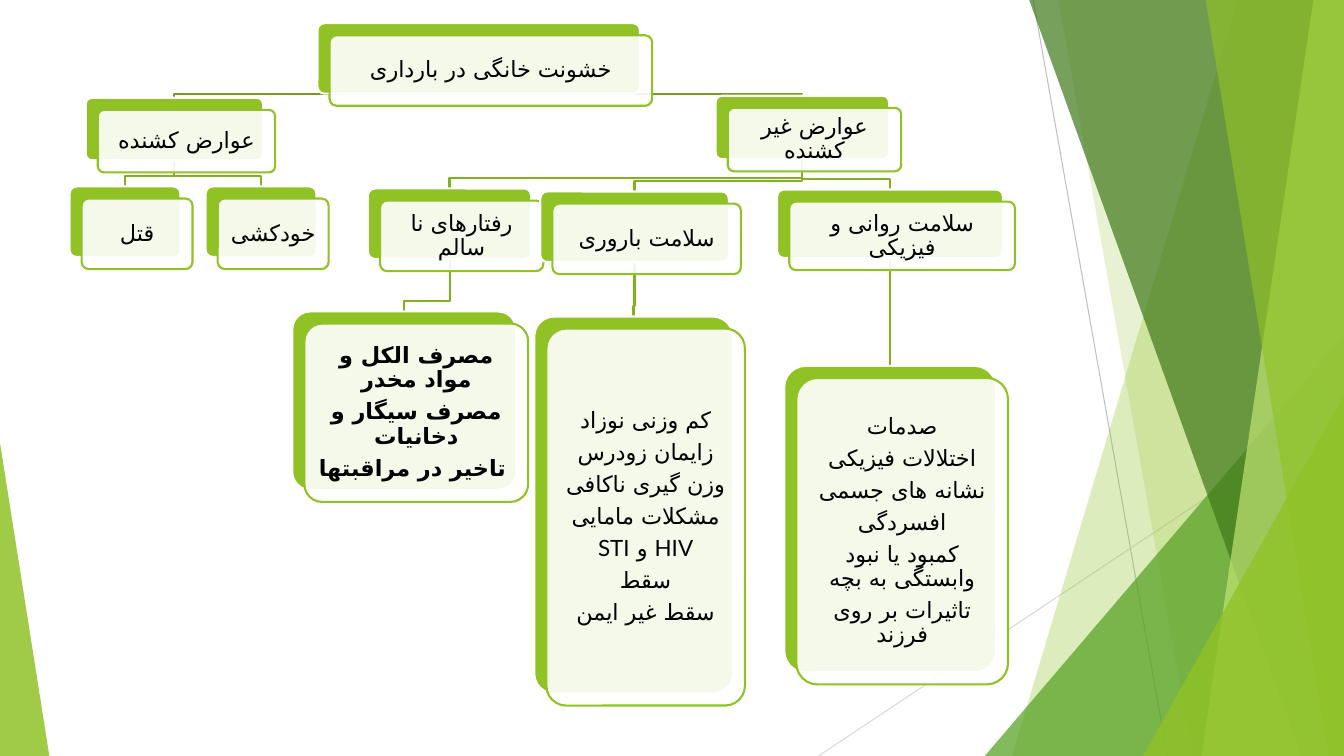
import lxml.etree
import pptx
import pptx.dml.color
import pptx.enum.shapes
import pptx.enum.text
import pptx.oxml.ns
import pptx.util

RGB = pptx.dml.color.RGBColor
SHAPE = pptx.enum.shapes.MSO_SHAPE
CONNECTOR = pptx.enum.shapes.MSO_CONNECTOR
qn = pptx.oxml.ns.qn

GREEN = RGB(0x90, 0xC2, 0x26)
MID_GREEN = RGB(0x54, 0xA0, 0x21)
DARK_GREEN = RGB(0x3F, 0x78, 0x19)
PALE_GREEN = RGB(0xC0, 0xE4, 0x74)
TOP_LINK = RGB(0x73, 0x9B, 0x1E)
LINK = RGB(0x83, 0xB0, 0x22)
GRAY = RGB(0xBF, 0xBF, 0xBF)
LIGHT_GRAY = RGB(0xD9, 0xD9, 0xD9)
WHITE = RGB(0xFF, 0xFF, 0xFF)
BLACK = RGB(0, 0, 0)

COLUMNS, ROWS = 133.33, 75
CARD_SHIFT = 1.2
ELBOW_RISE = 1

INSET = pptx.util.Inches(0.07)
FRAME = {
    "word_wrap": True,
    "vertical_anchor": pptx.enum.text.MSO_ANCHOR.MIDDLE,
    "margin_left": INSET,
    "margin_right": INSET,
    "margin_top": INSET,
    "margin_bottom": INSET,
}
PARAGRAPH = {
    "alignment": pptx.enum.text.PP_ALIGN.CENTER,
    "line_spacing": 0.9,
    "space_after": pptx.util.Pt(5.6),
}
FONT = {
    "name": "Lato",
    "size": pptx.util.Pt(16),
}
PERSIAN_FONT = "DejaVu Sans"

BACKDROP_LINES = [
    ((102.5, 0), (115.8, 75), GRAY),
    ((133.3, 40.3), (81.2, 75), LIGHT_GRAY),
]
BACKDROP_BANDS = [
    (122.8, 100.4, GREEN, 30),
    (105, 118.3, GREEN, 20),
    (97.7, 33.3, 35.6, 41.7, 1, MID_GREEN, 72),
    (102.1, 129.1, DARK_GREEN, 70),
    (130.3, 119.2, PALE_GREEN, 70),
    (119.6, 131.8, GREEN, 65),
    (113.4, 39.3, 19.9, 35.7, 1, GREEN, 80),
    (0, 43.9, 4.9, 31.1, 0, GREEN, 85),
]

CARDS = {
    "violence": (None, (31.5, 2.3, 32, 7), ["خشونت خانگی در بارداری"]),
    "fatal": ("violence", (8.5, 9.7, 17.6, 6.2), ["عوارض کشنده"]),
    "murder": ("fatal", (6.9, 18.5, 11, 7), ["قتل"]),
    "suicide": ("fatal", (20.4, 18.5, 11, 7), ["خودکشی"]),
    "nonfatal": ("violence", (71, 9.5, 17.2, 6.3), ["عوارض غیر کشنده"]),
    "behaviour": ("nonfatal", (36.5, 18.7, 16.2, 7), ["رفتارهای نا سالم"]),
    "habits": ("behaviour", (29, 30.9, 22.2, 17.7), [
        "مصرف الکل و مواد مخدر",
        "مصرف سیگار و دخانیات",
        " تاخیر در مراقبتها",
    ]),
    "reproductive": ("nonfatal", (53.6, 19, 18.7, 7), ["سلامت باروری"]),
    "birth": ("reproductive", (53, 31.4, 19.7, 37.4), [
        "کم وزنی نوزاد",
        "زایمان زودرس",
        "وزن گیری ناکافی",
        "مشکلات مامایی",
        "HIV و STI",
        "سقط",
        "سقط غیر ایمن",
    ]),
    "health": ("nonfatal", (77.1, 18.8, 22.4, 6.8), ["سلامت روانی و فیزیکی"]),
    "injuries": ("health", (77.8, 36.3, 21, 30.4), [
        "صدمات",
        "اختلالات فیزیکی",
        "نشانه های جسمی",
        "افسردگی",
        "کمبود یا نبود وابستگی به بچه",
        "تاثیرات بر روی فرزند",
    ]),
}
BOLD_CARDS = {"habits"}


def apply(target, values):
    for name, value in values.items():
        setattr(target, name, value)


class Canvas:
    def __init__(self, deck):
        self.shapes = deck.slides.add_slide(deck.slide_layouts[6]).shapes
        self.column = deck.slide_width / COLUMNS
        self.row = deck.slide_height / ROWS

    def at(self, x, y):
        return round(x * self.column), round(y * self.row)

    def paint(self, shape, fill=None, opacity=100, line=None):
        shape.shadow.inherit = False
        if fill is None:
            shape.fill.background()
        else:
            shape.fill.solid()
            shape.fill.fore_color.rgb = fill
            if opacity < 100:
                color = shape.fill._xPr.find(qn("a:solidFill"))[0]
                lxml.etree.SubElement(color, qn("a:alpha"), val=str(opacity * 1000))
        if line is None:
            shape.line.fill.background()
        else:
            shape.line.color.rgb = line
            shape.line.width = pptx.util.Pt(1.5)
        return shape

    def straight(self, start, end, color, width):
        line = self.shapes.add_connector(CONNECTOR.STRAIGHT, *self.at(*start), *self.at(*end))
        line.line.color.rgb = color
        line.line.width = pptx.util.Pt(width)
        lxml.etree.SubElement(line._element.spPr, qn("a:effectLst"))
        return line

    def outline(self, points, close, **look):
        first, *rest = [self.at(*point) for point in points]
        builder = self.shapes.build_freeform(*first)
        builder.add_line_segments(rest, close=close)
        return self.paint(builder.convert_to_shape(), **look)

    def band(self, top, bottom, color, opacity):
        corners = [(top, 0), (COLUMNS, 0), (COLUMNS, ROWS), (bottom, ROWS)]
        self.outline(corners, True, fill=color, opacity=opacity)

    def preset(self, kind, box, adjustment, **look):
        x, y, width, height = box
        shape = self.shapes.add_shape(kind, *self.at(x, y), *self.at(width, height))
        shape.adjustments[0] = adjustment
        return self.paint(shape, **look)

    def elbow(self, start, end, color):
        bend = max(start[1], end[1] - ELBOW_RISE)
        self.outline([start, (start[0], bend), (end[0], bend), end], False, line=color)

    def card(self, box, lines, bold):
        x, y, width, height = box
        back = self.preset(SHAPE.ROUNDED_RECTANGLE, box, 0.1, fill=GREEN, line=WHITE)
        front = self.preset(
            SHAPE.ROUNDED_RECTANGLE, (x + CARD_SHIFT, y + CARD_SHIFT, width, height),
            0.1, fill=WHITE, opacity=90, line=GREEN)
        frame = front.text_frame
        apply(frame, FRAME)
        frame.text = "\n".join(lines)
        for paragraph in frame.paragraphs:
            apply(paragraph, PARAGRAPH)
            paragraph._p.get_or_add_pPr().set("rtl", "1")
            for run in paragraph.runs:
                apply(run.font, FONT)
                run.font.bold = bold
                run.font.color.rgb = BLACK
                lxml.etree.SubElement(run.font._element, qn("a:cs"), typeface=PERSIAN_FONT)
        return back


def main():
    deck = pptx.Presentation()
    deck.slide_width = pptx.util.Inches(13.33)
    deck.slide_height = pptx.util.Inches(7.5)
    canvas = Canvas(deck)

    for start, end, color in BACKDROP_LINES:
        canvas.straight(start, end, color, 0.75)
    for band in BACKDROP_BANDS:
        if len(band) == 4:
            canvas.band(*band)
        else:
            *box, apex, color, opacity = band
            canvas.preset(SHAPE.ISOSCELES_TRIANGLE, box, apex, fill=color, opacity=opacity)

    joined = []
    for name, (parent, (x, y, width, _), _) in CARDS.items():
        if parent is None:
            continue
        px, py, parent_width, parent_height = CARDS[parent][1]
        start = (px + parent_width / 2, py + parent_height)
        end = (x + width / 2, y)
        if abs(start[0] - end[0]) < 0.05:
            joined.append((canvas.straight(start, end, LINK, 1.5), parent, name))
        else:
            canvas.elbow(start, end, TOP_LINK if parent == "violence" else LINK)

    backs = {
        name: canvas.card(box, lines, name in BOLD_CARDS)
        for name, (_, box, lines) in CARDS.items()
    }
    for link, parent, child in joined:
        link.begin_connect(backs[parent], 2)
        link.end_connect(backs[child], 0)

    deck.save("out.pptx")


if __name__ == "__main__":
    main()
